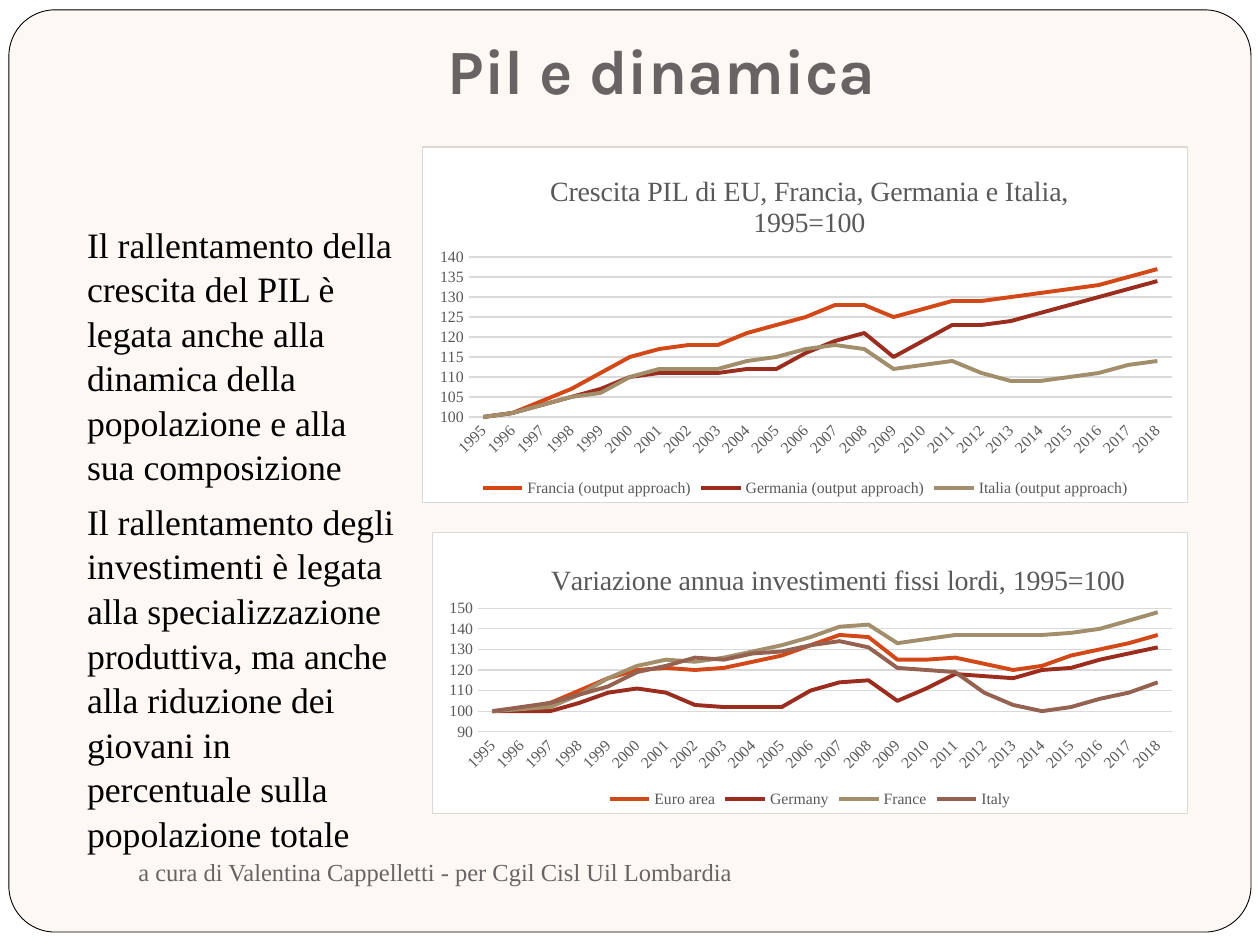
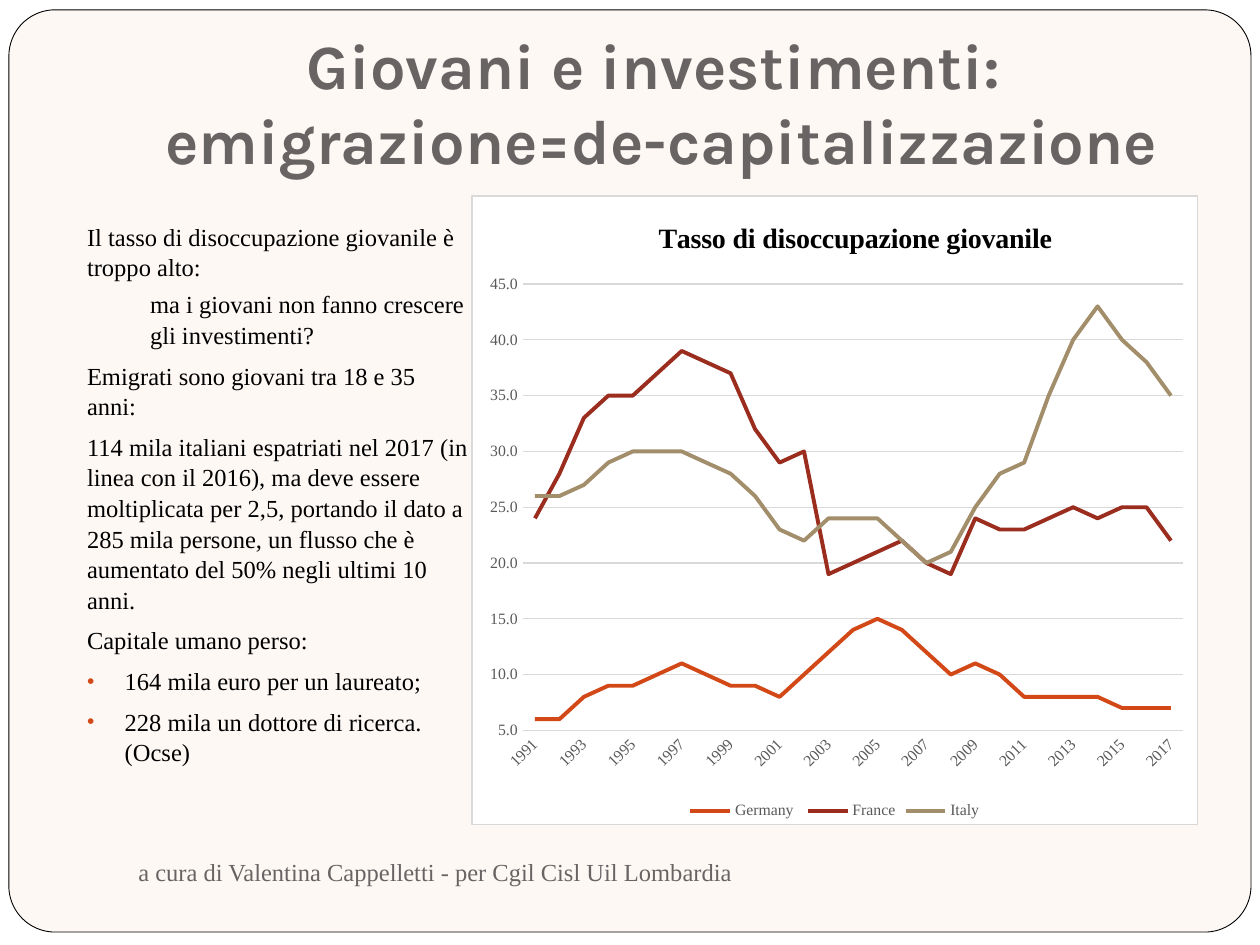
import dataclasses

import pptx
import pptx.chart.data
import pptx.dml.color
import pptx.enum.chart
import pptx.enum.shapes
import pptx.enum.text
import pptx.oxml
import pptx.oxml.ns
import pptx.util

Cm = pptx.util.Cm
Pt = pptx.util.Pt
RGBColor = pptx.dml.color.RGBColor
NAMESPACES = pptx.oxml.ns.nsdecls("a", "c")


@dataclasses.dataclass(frozen=True)
class Theme:
    title_font: str = "Karla"
    text_font: str = "Times New Roman"
    white: str = "FFFFFF"
    black: str = "000000"
    frame: str = "FAD9CD"
    frame_opacity: int = 18
    heading: str = "696464"
    label: str = "595959"
    grid: str = "D9D9D9"
    series: tuple = ("D34817", "9B2D1F", "A28E6A", "956251")
    title_size: float = 36
    footer_size: float = 14
    chart_title_size: float = 16
    label_size: float = 9
    thin: float = 0.75
    line_width: float = 2.25


THEME = Theme()
FOOTER = "a cura di Valentina Cappelletti - per Cgil Cisl Uil Lombardia"

# Paragraph kinds: level, left margin (cm), first-line indent (cm), space before (pt)
PARAGRAPH_KINDS = {
    "plain": (0, 0, 0, 5.8),
    "sub": (1, 1.27, 0, 3.7),
    "bullet": (0, 0.76, -0.76, 5.8),
}


def apply(target, values):
    for name, value in values.items():
        setattr(target, name, value)


def set_font(font, size, color, name=THEME.text_font, bold=False):
    apply(font, {"size": Pt(size), "name": name, "bold": bold})
    font.color.rgb = RGBColor.from_string(color)


def set_line(line, color, width):
    line.color.rgb = RGBColor.from_string(color)
    line.width = Pt(width)


def set_layout(parent, index, target="", **fractions):
    """Place a chart part by fractions of the chart area."""
    for layout in parent.xpath("c:layout"):
        parent.remove(layout)
    modes = "".join(f'<c:{axis}Mode val="edge"/>' for axis in "xy")
    sizes = "".join(f'<c:{key} val="{value}"/>' for key, value in fractions.items())
    parent.insert(index, pptx.oxml.parse_xml(
        f"<c:layout {NAMESPACES}><c:manualLayout>{target}{modes}{sizes}"
        "</c:manualLayout></c:layout>"))


class Deck:
    def __init__(self, theme):
        self.theme = theme
        self.presentation = pptx.Presentation()
        apply(self.presentation, {"slide_width": Cm(25.4), "slide_height": Cm(19.05)})
        self.slide = None

    def add_slide(self):
        first = self.slide is None
        self.slide = self.presentation.slides.add_slide(self.presentation.slide_layouts[1])
        if first:
            self.frame_master()
        self.footer()

    def frame_master(self):
        """Put the rounded frame behind every slide by moving it to the master."""
        theme, master = self.theme, self.presentation.slide_master
        background = master.background.fill
        background.solid()
        background.fore_color.rgb = RGBColor.from_string(theme.white)
        frame = self.slide.shapes.add_shape(
            pptx.enum.shapes.MSO_SHAPE.ROUNDED_RECTANGLE,
            Cm(0.18), Cm(0.2), Cm(25.04), Cm(18.59))
        frame.adjustments[0] = 0.05
        frame.shadow.inherit = False
        frame.fill.solid()
        frame.fill.fore_color.rgb = RGBColor.from_string(theme.frame)
        set_line(frame.line, theme.black, 0.5)
        color = frame.element.xpath("p:spPr/a:solidFill/a:srgbClr")[0]
        color.append(pptx.oxml.parse_xml(
            f'<a:alpha {NAMESPACES} val="{theme.frame_opacity * 1000}"/>'))
        master.element.xpath("p:cSld/p:spTree")[0].insert(2, frame.element)

    def footer(self):
        box = self.slide.shapes.add_textbox(Cm(2.54), Cm(17.15), Cm(14), Cm(1.37))
        box.text_frame.word_wrap = True
        paragraph = box.text_frame.paragraphs[0]
        paragraph.text = FOOTER
        set_font(paragraph.font, self.theme.footer_size, self.theme.heading)

    def title(self, text, height, bottom_inset=0.25):
        title = self.slide.shapes.title
        apply(title, {"left": Cm(2.54), "top": Cm(0.76),
                      "width": Cm(21.59), "height": Cm(height)})
        apply(title.text_frame, {
            "word_wrap": True,
            "auto_size": pptx.enum.text.MSO_AUTO_SIZE.NONE,
            "vertical_anchor": pptx.enum.text.MSO_ANCHOR.BOTTOM,
            "margin_top": Cm(0.13),
            "margin_bottom": Cm(bottom_inset),
        })
        paragraph = title.text_frame.paragraphs[0]
        paragraph.text = text
        paragraph.alignment = pptx.enum.text.PP_ALIGN.CENTER
        set_font(paragraph.font, self.theme.title_size, self.theme.heading,
                 self.theme.title_font, True)

    def body(self, items, width, size):
        body = self.slide.placeholders[1]
        apply(body, {"left": Cm(1.5), "top": Cm(4.32),
                     "width": Cm(width), "height": Cm(12.22)})
        frame = body.text_frame
        apply(frame, {"word_wrap": True,
                      "auto_size": pptx.enum.text.MSO_AUTO_SIZE.NONE})
        for number, (kind, text) in enumerate(items):
            paragraph = frame.add_paragraph() if number else frame.paragraphs[0]
            level, margin, indent, space = PARAGRAPH_KINDS[kind]
            apply(paragraph, {"text": text, "level": level, "line_spacing": 1.04,
                              "space_before": Pt(space), "space_after": Pt(0)})
            set_font(paragraph.font, size, self.theme.black)
            self.bullet(paragraph, kind == "bullet", margin, indent)

    def bullet(self, paragraph, shown, margin, indent):
        properties = paragraph._p.get_or_add_pPr()
        properties.set("marL", str(Cm(margin)))
        properties.set("indent", str(Cm(indent)))
        parts = ["<a:buNone {}/>"]
        if shown:
            parts = [f'<a:buClr {{}}><a:srgbClr val="{self.theme.series[0]}"/></a:buClr>',
                     '<a:buSzPct {} val="85000"/>', '<a:buChar {} char="•"/>']
        default_run = properties.find(pptx.oxml.ns.qn("a:defRPr"))
        for part in parts:
            element = pptx.oxml.parse_xml(part.format(NAMESPACES))
            if default_run is None:
                properties.append(element)
            else:
                default_run.addprevious(element)

    def line_chart(self, place, title, years, series, scale, number_format,
                   title_place, plot_place, title_color=THEME.label, title_bold=False):
        """Draw a line chart; scale holds minimum, maximum and major unit."""
        theme = self.theme
        data = pptx.chart.data.CategoryChartData()
        data.categories = [str(year) for year in years]
        for name, values in series.items():
            data.add_series(name, values)
        chart = self.slide.shapes.add_chart(
            pptx.enum.chart.XL_CHART_TYPE.LINE, *map(Cm, place), data).chart
        set_font(chart.font, 10, theme.black)
        chart.element.xpath("c:chart")[0].addnext(pptx.oxml.parse_xml(
            f'<c:spPr {NAMESPACES}><a:solidFill><a:srgbClr val="{theme.white}"/></a:solidFill>'
            f'<a:ln w="{Pt(theme.thin)}"><a:solidFill><a:srgbClr val="{theme.grid}"/>'
            "</a:solidFill></a:ln></c:spPr>"))

        chart.has_title = True
        chart.chart_title.text_frame.text = title
        set_font(chart.chart_title.text_frame.paragraphs[0].runs[0].font,
                 theme.chart_title_size, title_color, bold=title_bold)
        title_x, title_y = title_place
        set_layout(chart.element.xpath("c:chart/c:title")[0], 1, x=title_x, y=title_y)
        set_layout(chart.element.xpath("c:chart/c:plotArea")[0], 0,
                   '<c:layoutTarget val="inner"/>', **dict(zip("xywh", plot_place)))

        chart.has_legend = True
        apply(chart.legend, {"position": pptx.enum.chart.XL_LEGEND_POSITION.BOTTOM,
                             "include_in_layout": False})
        set_font(chart.legend.font, theme.label_size, theme.label)
        self.axes(chart, scale, number_format)

        plot = chart.plots[0]
        plot.vary_by_categories = False
        for line, color in zip(plot.series, theme.series):
            line.smooth = False
            set_line(line.format.line, color, theme.line_width)

    def axes(self, chart, scale, number_format):
        theme = self.theme
        no_tick = pptx.enum.chart.XL_TICK_MARK.NONE
        for axis in (chart.category_axis, chart.value_axis):
            apply(axis, {"major_tick_mark": no_tick, "minor_tick_mark": no_tick})
            set_font(axis.tick_labels.font, theme.label_size, theme.label)
        set_line(chart.category_axis.format.line, theme.grid, theme.thin)
        chart.element.xpath(".//c:catAx/c:txPr/a:bodyPr")[0].set("rot", "-2700000")
        values = chart.value_axis
        minimum, maximum, unit = scale
        apply(values, {"minimum_scale": minimum, "maximum_scale": maximum,
                       "major_unit": unit, "has_major_gridlines": True})
        apply(values.tick_labels, {"number_format": number_format,
                                   "number_format_is_linked": False})
        values.format.line.fill.background()
        set_line(values.major_gridlines.format.line, theme.grid, theme.thin)


def growth_slide(deck):
    deck.add_slide()
    deck.title("Pil e dinamica", 3.17, bottom_inset=1.78)
    deck.body([
        ("plain", "Il rallentamento della crescita del PIL è legata anche alla dinamica "
                  "della popolazione e alla sua composizione"),
        ("plain", "Il rallentamento degli investimenti è legata alla specializzazione "
                  "produttiva, ma anche alla riduzione dei giovani in percentuale sulla "
                  "popolazione totale"),
    ], 6.81, 20.4)
    years = range(1995, 2019)
    deck.line_chart(
        (8.51, 2.95, 15.44, 7.19),
        "Crescita PIL di EU, Francia, Germania e Italia, 1995=100", years, {
            "Francia (output approach)": (
                100, 101, 104, 107, 111, 115, 117, 118, 118, 121, 123, 125,
                128, 128, 125, 127, 129, 129, 130, 131, 132, 133, 135, 137),
            "Germania (output approach)": (
                100, 101, 103, 105, 107, 110, 111, 111, 111, 112, 112, 116,
                119, 121, 115, 119, 123, 123, 124, 126, 128, 130, 132, 134),
            "Italia (output approach)": (
                100, 101, 103, 105, 106, 110, 112, 112, 112, 114, 115, 117,
                118, 117, 112, 113, 114, 111, 109, 109, 110, 111, 113, 114),
        }, (100, 140, 5), "0", (0.16, 0.06), (0.06, 0.31, 0.92, 0.45))
    deck.line_chart(
        (8.71, 10.72, 15.24, 5.69),
        "Variazione annua investimenti fissi lordi, 1995=100", years, {
            "Euro area": (
                100, 101, 104, 110, 116, 120, 121, 120, 121, 124, 127, 132,
                137, 136, 125, 125, 126, 123, 120, 122, 127, 130, 133, 137),
            "Germany": (
                100, 100, 100, 104, 109, 111, 109, 103, 102, 102, 102, 110,
                114, 115, 105, 111, 118, 117, 116, 120, 121, 125, 128, 131),
            "France": (
                100, 101, 102, 108, 116, 122, 125, 124, 126, 129, 132, 136,
                141, 142, 133, 135, 137, 137, 137, 137, 138, 140, 144, 148),
            "Italy": (
                100, 102, 104, 108, 112, 119, 122, 126, 125, 128, 129, 132,
                134, 131, 121, 120, 119, 109, 103, 100, 102, 106, 109, 114),
        }, (90, 150, 10), "0", (0.15, 0.09), (0.06, 0.27, 0.92, 0.44))


def youth_slide(deck):
    deck.add_slide()
    deck.title("Giovani e investimenti: \nemigrazione=de-capitalizzazione", 3.07)
    deck.body([
        ("plain", "Il tasso di disoccupazione giovanile è troppo alto:"),
        ("sub", "ma i giovani non fanno crescere gli investimenti?"),
        ("plain", "Emigrati sono giovani tra 18 e 35 anni:"),
        ("plain", "114 mila italiani espatriati nel 2017 (in linea con il 2016), ma deve "
                  "essere moltiplicata per 2,5, portando il dato a 285 mila persone, un "
                  "flusso che è aumentato del 50% negli ultimi 10 anni."),
        ("plain", "Capitale umano perso:"),
        ("bullet", "164 mila euro per un laureato;"),
        ("bullet", "228 mila un dottore di ricerca. (Ocse)"),
    ], 8.2, 14)
    deck.line_chart(
        (9.5, 3.94, 14.66, 12.7),
        "Tasso di disoccupazione giovanile", range(1991, 2018), {
            "Germany ": (6, 6, 8, 9, 9, 10, 11, 10, 9, 9, 8, 10, 12, 14,
                         15, 14, 12, 10, 11, 10, 8, 8, 8, 8, 7, 7, 7),
            "France": (24, 28, 33, 35, 35, 37, 39, 38, 37, 32, 29, 30, 19, 20,
                       21, 22, 20, 19, 24, 23, 23, 24, 25, 24, 25, 25, 22),
            "Italy": (26, 26, 27, 29, 30, 30, 30, 29, 28, 26, 23, 22, 24, 24,
                      24, 22, 20, 21, 25, 28, 29, 35, 40, 43, 40, 38, 35),
        }, (5, 45, 5), "0.0", (0.25, 0.03), (0.07, 0.14, 0.91, 0.71),
        title_color=THEME.black, title_bold=True)


def main():
    deck = Deck(THEME)
    growth_slide(deck)
    youth_slide(deck)
    deck.presentation.save("out.pptx")


if __name__ == "__main__":
    main()
